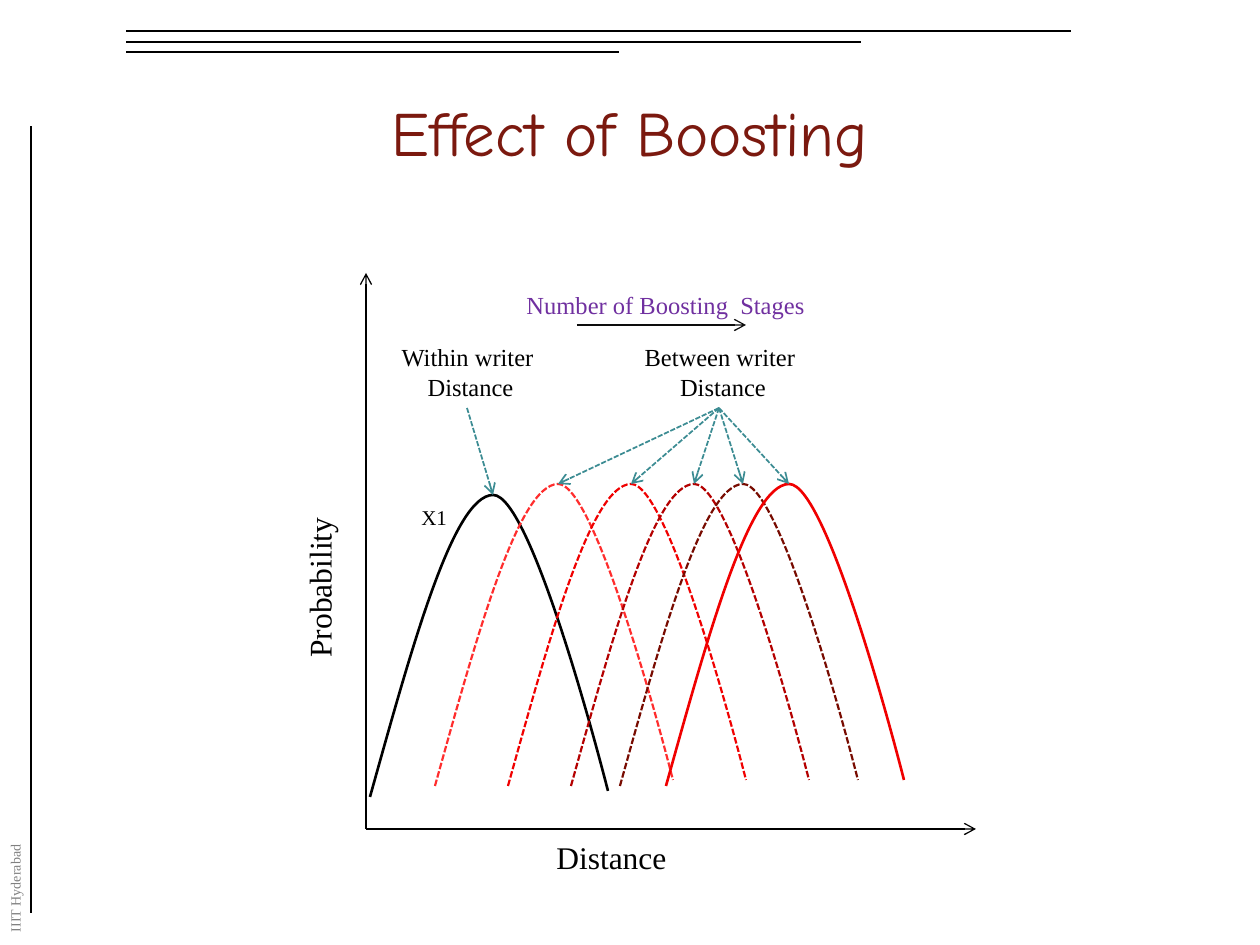
from dataclasses import dataclass

from lxml.etree import SubElement
from pptx import Presentation
from pptx.dml.color import RGBColor
from pptx.enum.dml import MSO_LINE_DASH_STYLE as Dash
from pptx.enum.shapes import MSO_CONNECTOR as Connector
from pptx.enum.text import MSO_ANCHOR as Anchor, MSO_AUTO_SIZE as AutoSize, PP_ALIGN as Align
from pptx.oxml.ns import qn
from pptx.util import Emu, Pt

EMU_PER_PX = 914400 / 126


def px(length):
    return Emu(round(length * EMU_PER_PX))


@dataclass(frozen=True)
class Theme:
    title_font: str = "Comic Neue"
    body_font: str = "Times New Roman"
    title_size: int = 36
    axis_size: int = 18
    label_size: int = 14
    mark_size: int = 12
    footer_size: int = 8
    black: str = "000000"
    near_black: str = "0D0D0D"
    grey: str = "808080"
    title: str = "7B190F"
    purple: str = "7030A0"
    teal: str = "3C8C93"
    red: str = "F00000"
    stages: tuple = ("FF2D2D", "F00000", "B40000", "780B00")
    thin: float = 0.75
    pointer: float = 1
    dashed: float = 1.25
    solid: float = 1.5


class SlideBuilder:
    # Start, then two cubic segments meeting at the apex, relative to the apex
    BELL = [(-123, 302), (-81, 152), (-40, 1), (0, 0), (40, -1), (115, 296), (115, 296)]

    def __init__(self, slide, theme):
        self.shapes = slide.shapes
        self.theme = theme

    def style_line(self, line, color, width, dashed):
        line.color.rgb = RGBColor.from_string(color)
        line.width = Pt(width)
        if dashed:
            line.dash_style = Dash.SQUARE_DOT

    def line(self, start, end, color, width, dashed=False, arrow=False):
        connector = self.shapes.add_connector(
            Connector.STRAIGHT, *map(px, (*start, *end)))
        self.style_line(connector.line, color, width, dashed)
        properties = connector._element.spPr
        if arrow:
            SubElement(properties.find(qn("a:ln")), qn("a:tailEnd"), type="arrow")
        SubElement(properties, qn("a:effectLst"))

    def bell(self, apex, color, width, dashed=False):
        """Draw a bell curve with its top at apex."""
        points = [(apex[0] + dx, apex[1] + dy) for dx, dy in self.BELL]
        builder = self.shapes.build_freeform(*points[0], scale=EMU_PER_PX)
        builder.add_line_segments(points[1:], close=False)
        shape = builder.convert_to_shape()
        shape.shadow.inherit = False
        shape.fill.background()
        self.style_line(shape.line, color, width, dashed)
        self.curve_segments(shape)

    def curve_segments(self, shape):
        """Turn each three straight segments into one cubic segment."""
        outline = next(shape._element.iter(qn("a:path")))
        segments = outline.findall(qn("a:lnTo"))
        for first in range(0, len(segments), 3):
            cubic = SubElement(outline, qn("a:cubicBezTo"))
            for segment in segments[first:first + 3]:
                cubic.append(segment[0])
                outline.remove(segment)

    def text(self, box, words, size, color, font=None, align=Align.LEFT,
             anchor=Anchor.TOP, rotation=0, wrap=False):
        shape = self.shapes.add_textbox(*map(px, box))
        shape.rotation = rotation
        frame = shape.text_frame
        frame.text = words
        frame.word_wrap = wrap
        frame.auto_size = AutoSize.NONE if wrap else AutoSize.SHAPE_TO_FIT_TEXT
        frame.vertical_anchor = anchor
        for paragraph in frame.paragraphs:
            paragraph.alignment = align
            for run in paragraph.runs:
                run.font.name = font or self.theme.body_font
                run.font.size = Pt(size)
                run.font.color.rgb = RGBColor.from_string(color)


def add_frame(builder, theme):
    for y, right in ((31, 1071), (42, 861), (52, 619)):
        builder.line((126, y), (right, y), theme.black, theme.thin)
    builder.line((31, 126), (31, 913), theme.black, theme.thin)
    builder.text((-43, 872, 116, 29), "IIIT Hyderabad", theme.footer_size,
                 theme.grey, rotation=270)
    builder.text((94, 52, 1072, 158), "Effect of Boosting", theme.title_size,
                 theme.title, theme.title_font, Align.CENTER, Anchor.MIDDLE, wrap=True)


def add_diagram(builder, theme):
    origin = (366, 829)
    within_apex = (493, 495)
    *stage_apexes, final_apex = [(x, 484) for x in (558, 631, 694, 743, 789)]

    builder.bell(within_apex, theme.black, theme.solid)
    for end in ((366, 273), (976, 829)):
        builder.line(origin, end, theme.black, theme.thin, arrow=True)
    for apex, color in zip(stage_apexes, theme.stages):
        builder.bell(apex, color, theme.dashed, dashed=True)
    builder.bell(final_apex, theme.red, theme.solid)

    builder.text((544, 832, 137, 50), "Distance", theme.axis_size, theme.black)
    builder.text((236, 562, 166, 50), "Probability", theme.axis_size,
                 theme.black, rotation=270)
    builder.text((409, 498, 52, 38), "X1", theme.mark_size, theme.black)
    for box, group in (((388, 336, 159, 72), "Within"), ((631, 336, 178, 72), "Between")):
        builder.text(box, f"{group} writer\n Distance", theme.label_size,
                     theme.black, align=Align.CENTER)

    for apex in (*stage_apexes, final_apex):
        builder.line((719, 408), apex, theme.teal, theme.pointer, dashed=True, arrow=True)
    builder.line((467, 408), within_apex, theme.teal, theme.pointer, dashed=True, arrow=True)

    builder.text((514, 284, 306, 43), "Number of Boosting  Stages",
                 theme.label_size, theme.purple)
    builder.line((577, 325), (746, 325), theme.near_black, theme.thin, arrow=True)


def main():
    presentation = Presentation()
    presentation.slide_width, presentation.slide_height = px(1260), px(945)
    slide = presentation.slides.add_slide(presentation.slide_layouts[6])
    theme = Theme()
    builder = SlideBuilder(slide, theme)
    add_frame(builder, theme)
    add_diagram(builder, theme)
    presentation.save("out.pptx")


if __name__ == "__main__":
    main()
